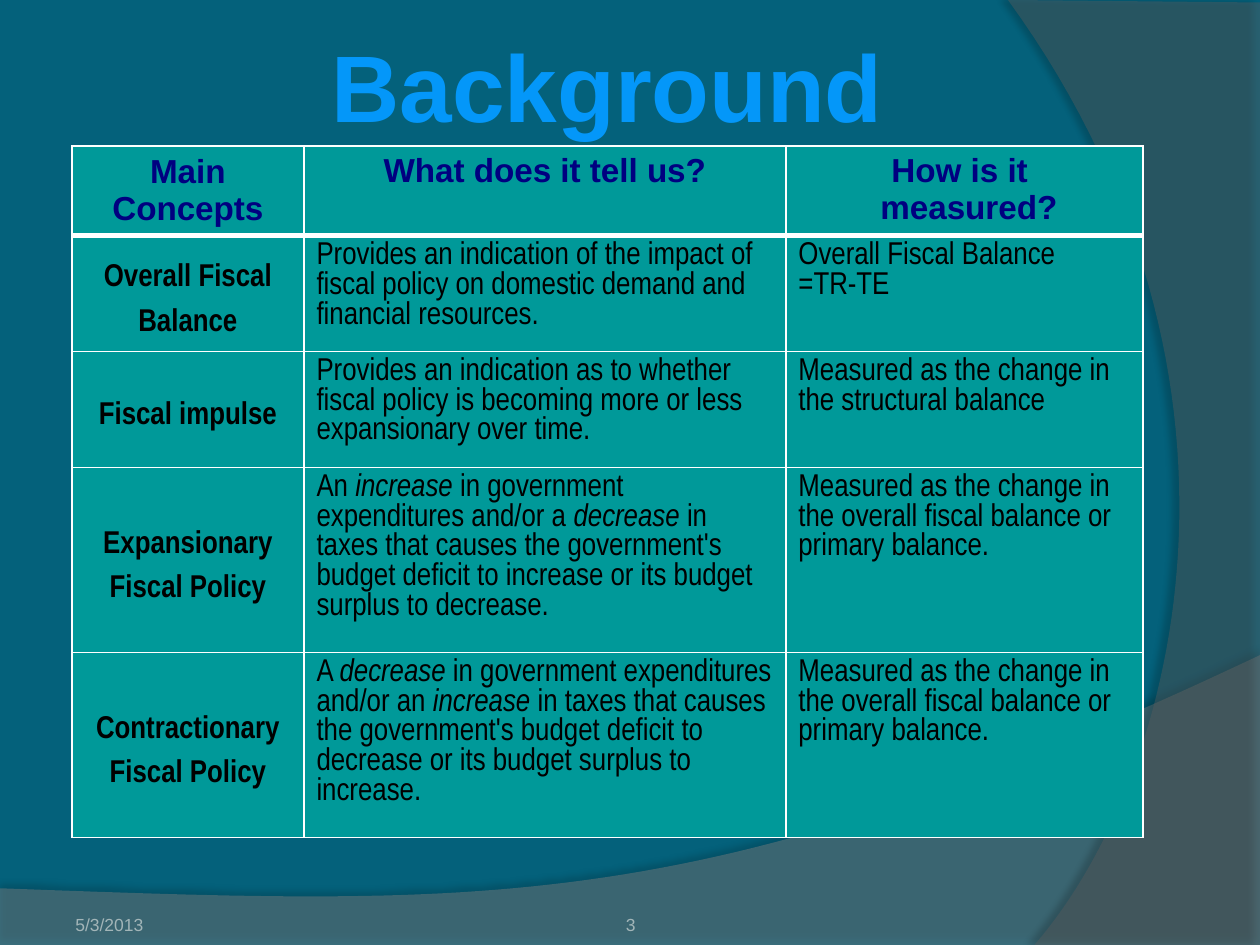
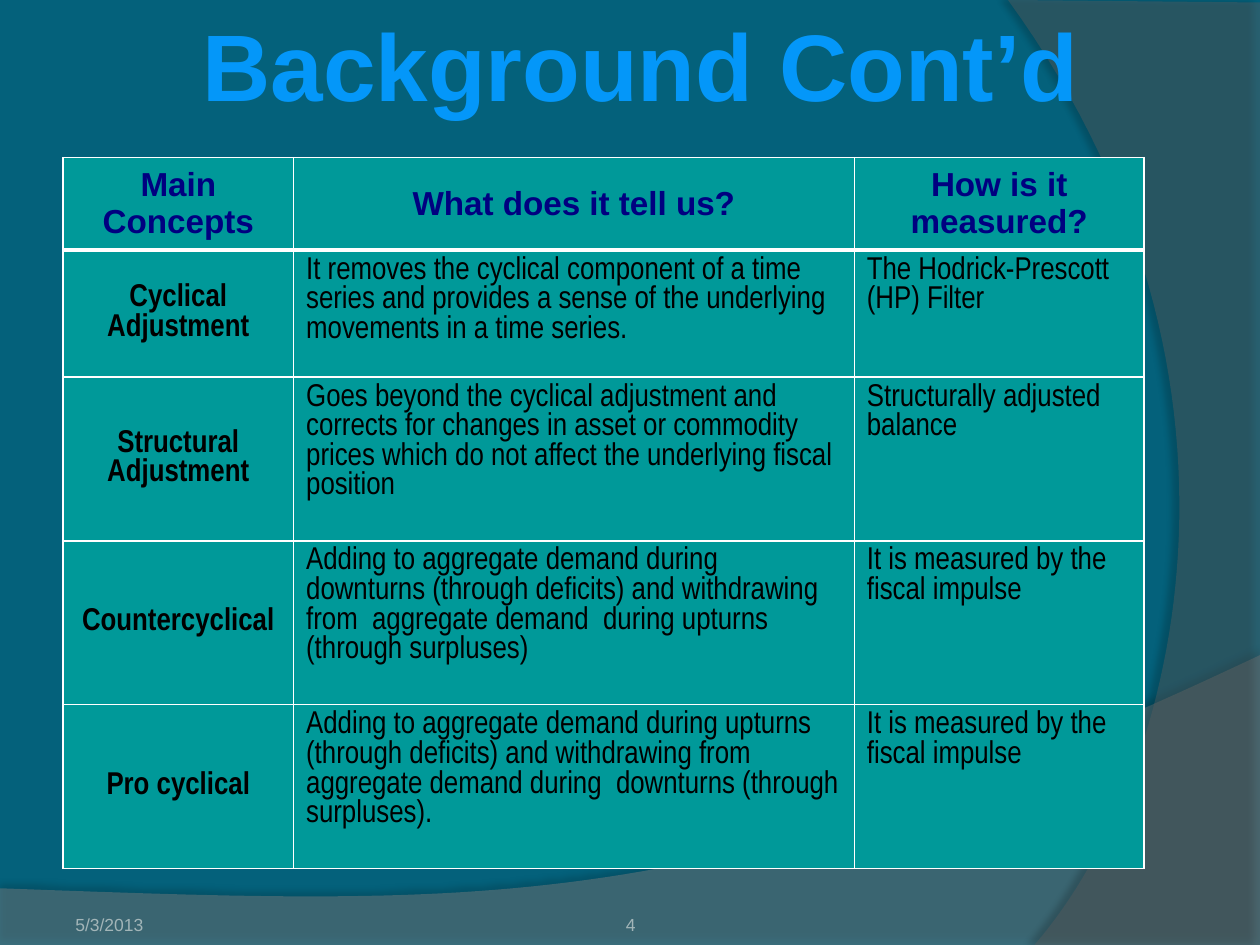
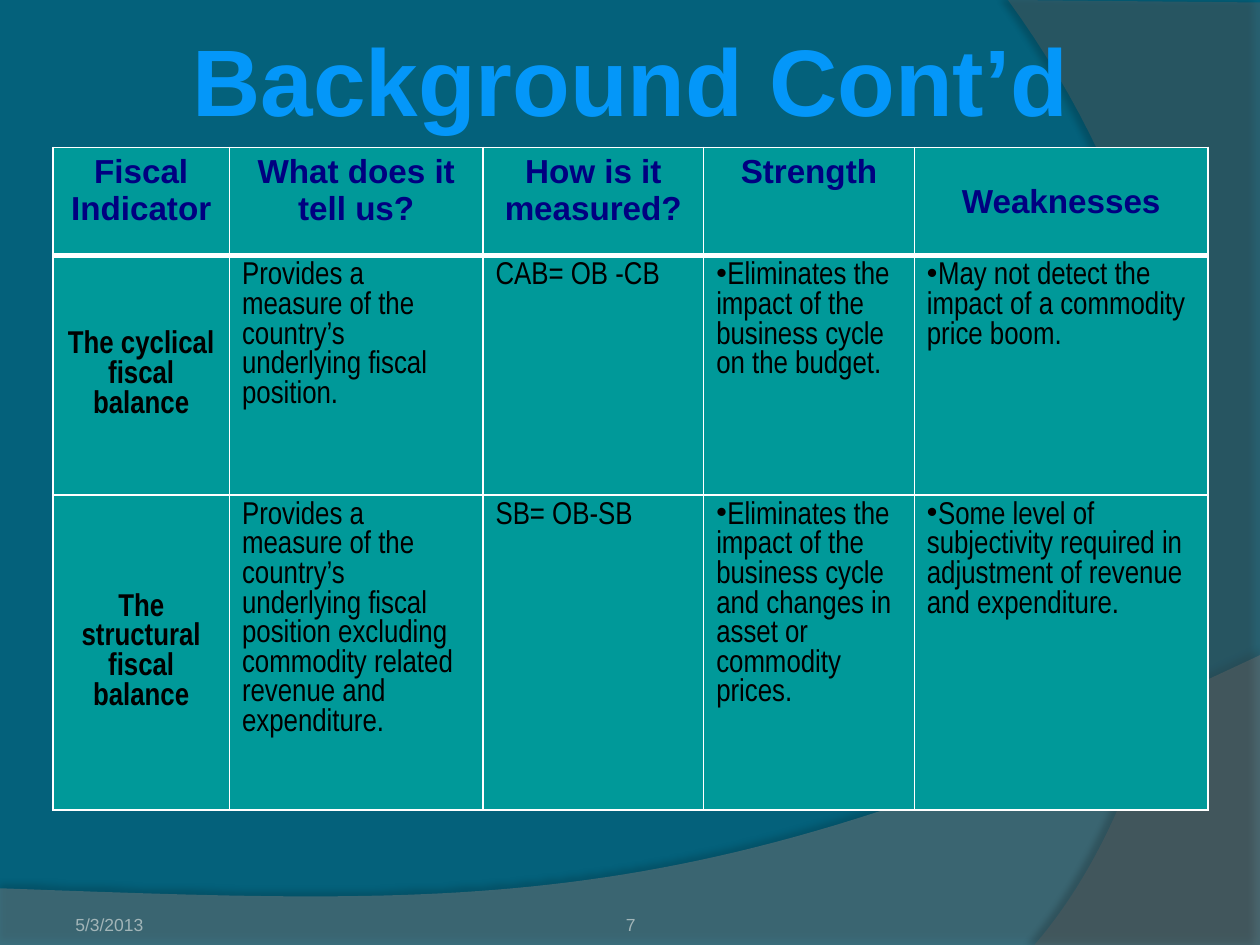
from itertools import product
from typing import NamedTuple

from lxml import etree
from pptx import Presentation
from pptx import util as u
from pptx.dml.color import RGBColor
from pptx.enum import text
from pptx.oxml.ns import qn

SLIDE_W, SLIDE_H = u.Inches(10), u.Inches(7.5)

DEEP_BLUE, TEAL, WHITE = "04617B", "009999", "FFFFFF"
TITLE_BLUE, HEADER_NAVY, BLACK, FOOTER_GREY = "0497F9", "000080", "000000", "A2B5B8"
CENTER, LEFT = text.PP_ALIGN.CENTER, text.PP_ALIGN.LEFT
TOP, MIDDLE, BOTTOM = (text.MSO_ANCHOR.TOP, text.MSO_ANCHOR.MIDDLE,
                       text.MSO_ANCHOR.BOTTOM)
DATE = "5/3/2013"

Point = tuple[float, float]


class Box(NamedTuple):
    """A frame in percent of the slide's width and height."""
    left: float
    top: float
    width: float
    height: float


class Style(NamedTuple):
    size: float
    font: str
    color: str
    bold: bool = False
    align: text.PP_ALIGN = LEFT
    spacing: float | None = None


class Swoosh(NamedTuple):
    """A translucent band: straight corners, then one curve back to its start."""
    corners: list[Point]
    curve: list[Point]
    color: str
    opacity: int
    shadow_opacity: int
    shadow_distance: float
    shadow_angle: int


class ConceptTable(NamedTuple):
    box: Box
    columns: list[int]
    rows: list[int]
    middle_headers: set[int]
    cells: list[list[str]]
    label_spacing: float | None = None


class Page(NamedTuple):
    number: int
    title: str
    title_box: Box
    title_anchor: text.MSO_ANCHOR
    table: ConceptTable


TITLE = Style(54, "Arial", TITLE_BLUE, True, CENTER)
HEADER = Style(19, "Arial", HEADER_NAVY, True, CENTER)
LABEL = Style(18, "Arial Narrow", BLACK, True, CENTER)
BODY = Style(18, "Arial Narrow", BLACK)
FOOTER = Style(10, "Arial", FOOTER_GREY)

DATE_BOX = Box(5, 93.6, 23.3, 5.33)
NUMBER_BOX = Box(34.2, 93.6, 31.7, 5.33)

SWOOSHES = [
    Swoosh([(0, 94), (0, 100), (100, 100), (100, 69.33)],
           [(55.9, 97.2), (39.1, 95.87), (0, 94)], "7F7F7F", 45, 35, 3.5, 270),
    Swoosh([(80, 0), (100, 0.27), (100, 100), (82.1, 100)],
           [(93.5, 82.53), (101.8, 40), (80, 0)], "5E5E5E", 40, 45, 4, 180),
]

# In cell texts, *stars* mark italics, a leading • a bulleted paragraph.
PAGES = [
    Page(3, "Background", Box(25.1, 2.27, 46.2, 25.6), TOP, ConceptTable(
        Box(5.7, 15.47, 85, 73.2), [184, 382, 283], [71, 92, 92, 147, 147], {0}, [
            ["Main Concepts", "What does it tell us?", "How is it \n measured?"],
            ["Overall Fiscal Balance",
             "Provides an indication of the impact of fiscal policy on domestic "
             "demand and financial resources.",
             "Overall Fiscal Balance\n=TR-TE"],
            ["Fiscal impulse",
             "Provides an indication as to whether fiscal policy is becoming more "
             "or less expansionary over time.",
             "Measured as the change in the structural balance"],
            ["Expansionary Fiscal Policy",
             "An *increase* in government expenditures and/or a *decrease* in taxes "
             "that causes the government's budget deficit to increase or its budget "
             "surplus to decrease.",
             "Measured as the change in the overall fiscal balance or primary balance."],
            ["Contractionary Fiscal Policy",
             "A *decrease* in government expenditures and/or an *increase* in taxes "
             "that causes the government's budget deficit to decrease or its budget "
             "surplus to increase.",
             "Measured as the change in the overall fiscal balance or primary balance."],
        ], label_spacing=1.5)),
    Page(4, "Background Cont’d", Box(14.7, 0, 72.3, 13.47), MIDDLE, ConceptTable(
        Box(5, 16.67, 85.8, 75.07), [183, 445, 230], [73, 101, 130, 130, 130],
        {0, 1, 2}, [
            ["Main Concepts", "What does it tell us?", "How is it measured?"],
            ["Cyclical Adjustment",
             "It removes the cyclical component of a time series and provides a "
             "sense of the underlying movements in a time series.",
             "The Hodrick-Prescott (HP) Filter"],
            ["Structural Adjustment",
             "Goes beyond the cyclical adjustment and corrects for changes in asset "
             "or commodity prices which do not affect the underlying fiscal position",
             "Structurally adjusted balance"],
            ["Countercyclical",
             "Adding to aggregate demand during downturns (through deficits) and "
             "withdrawing from  aggregate demand  during upturns (through surpluses)",
             "It is measured by the fiscal impulse"],
            ["Pro cyclical",
             "Adding to aggregate demand during upturns (through deficits) and "
             "withdrawing from aggregate demand during  downturns (through surpluses).",
             "It is measured by the fiscal impulse"],
        ])),
    Page(7, "Background Cont’d", Box(13.9, 1.6, 72.3, 13.47), MIDDLE, ConceptTable(
        Box(4.2, 15.6, 91.7, 70.13), [140, 201, 175, 167, 233], [86, 190, 250], {4}, [
            ["Fiscal Indicator", "What does it tell us?", "How is it measured?",
             "Strength", "Weaknesses"],
            ["The cyclical\nfiscal balance",
             "Provides a measure of the country’s underlying fiscal position.",
             "CAB= OB -CB",
             "•Eliminates the impact of the business cycle on the budget.",
             "•May not detect the impact of a commodity price boom."],
            ["The structural\nfiscal balance",
             "Provides a measure of the country’s underlying fiscal position "
             "excluding commodity related revenue and expenditure.",
             "SB= OB-SB",
             "•Eliminates the impact of the business cycle and changes in asset or "
             "commodity prices.",
             "•Some level of subjectivity required in adjustment of revenue and "
             "expenditure."],
        ])),
]


def rgb(color: str) -> RGBColor:
    return RGBColor.from_string(color)


def across(share: float) -> int:
    return round(SLIDE_W * share / 100)


def down(share: float) -> int:
    return round(SLIDE_H * share / 100)


def place(box: Box) -> tuple[int, int, int, int]:
    return across(box.left), down(box.top), across(box.width), down(box.height)


def add_xml(parent, tag: str, **attributes):
    return etree.SubElement(parent, qn(tag), {k: str(v) for k, v in attributes.items()})


def write(frame, content: str, style: Style) -> None:
    """Fill a text frame, one paragraph a line."""
    frame.word_wrap = True
    for index, line in enumerate(content.split("\n")):
        paragraph = frame.add_paragraph() if index else frame.paragraphs[0]
        paragraph.alignment = style.align
        if style.spacing:
            paragraph.line_spacing = style.spacing
        if line.startswith("•"):
            properties = paragraph._p.get_or_add_pPr()
            properties.set("marL", "0")
            properties.set("indent", "0")
            add_xml(properties, "a:buChar", char="•")
        for part, words in enumerate(line.removeprefix("•").split("*")):
            run = paragraph.add_run()
            run.text = words
            font = run.font
            font.size, font.name = u.Pt(style.size), style.font
            font.bold, font.italic = style.bold, part % 2 == 1
            font.color.rgb = rgb(style.color)


def add_text(slide, box: Box, content: str, style: Style, anchor: text.MSO_ANCHOR):
    frame = slide.shapes.add_textbox(*place(box)).text_frame
    frame.vertical_anchor = anchor
    write(frame, content, style)
    return frame


def bezier(points: list[Point], steps: int = 60) -> list[Point]:
    """Sample a cubic curve given by four points, without its start."""
    def at(t: float) -> Point:
        weights = ((1 - t) ** 3, 3 * t * (1 - t) ** 2, 3 * t * t * (1 - t), t ** 3)
        return (sum(w * p[0] for w, p in zip(weights, points)),
                sum(w * p[1] for w, p in zip(weights, points)))
    return [at(step / steps) for step in range(1, steps + 1)]


def add_swoosh(slide, swoosh: Swoosh) -> None:
    outline = swoosh.corners + bezier([swoosh.corners[-1], *swoosh.curve])
    start, *others = [(across(x), down(y)) for x, y in outline]
    builder = slide.shapes.build_freeform(*start)
    builder.add_line_segments(others, close=True)
    band = builder.convert_to_shape()
    band.line.fill.background()
    band.fill.solid()
    band.fill.fore_color.rgb = rgb(swoosh.color)
    band.shadow.inherit = False
    properties = band._element.spPr
    add_xml(properties.find(qn("a:solidFill"))[0], "a:alpha", val=swoosh.opacity * 1000)
    shadow = add_xml(properties.find(qn("a:effectLst")), "a:outerShdw",
                     blurRad=u.Pt(4), dist=u.Pt(swoosh.shadow_distance),
                     dir=swoosh.shadow_angle * 60000, algn="ctr", rotWithShape=0)
    shade = add_xml(shadow, "a:srgbClr", val=BLACK)
    add_xml(shade, "a:alpha", val=swoosh.shadow_opacity * 1000)


def paint_cell(cell, row: int) -> None:
    """White borders, heavy between header and body, around a teal fill."""
    heavy_side = {0: "B", 1: "T"}.get(row)
    for side in "LRTB":
        line = add_xml(cell._tc.get_or_add_tcPr(), f"a:ln{side}",
                       w=u.Pt(3 if side == heavy_side else 1))
        add_xml(add_xml(line, "a:solidFill"), "a:srgbClr", val=WHITE)
    cell.fill.solid()
    cell.fill.fore_color.rgb = rgb(TEAL)


def add_concepts(slide, concepts: ConceptTable) -> None:
    left, top, width, height = place(concepts.box)
    grid = slide.shapes.add_table(len(concepts.rows), len(concepts.columns),
                                  left, top, width, height).table
    grid.first_row = grid.horz_banding = False
    for column, share in zip(grid.columns, concepts.columns):
        column.width = round(width * share / sum(concepts.columns))
    for row, share in zip(grid.rows, concepts.rows):
        row.height = round(height * share / sum(concepts.rows))
    label = LABEL._replace(spacing=concepts.label_spacing)
    for r, c in product(range(len(concepts.rows)), range(len(concepts.columns))):
        cell = grid.cell(r, c)
        paint_cell(cell, r)
        middle = c in concepts.middle_headers if r == 0 else c == 0
        cell.vertical_anchor = MIDDLE if middle else TOP
        write(cell.text_frame, concepts.cells[r][c],
              HEADER if r == 0 else label if c == 0 else BODY)


def add_footer(slide, number: int) -> None:
    for box, content, align, side in ((NUMBER_BOX, str(number), CENTER, 0),
                                      (DATE_BOX, DATE, LEFT, 0.1)):
        frame = add_text(slide, box, content, FOOTER._replace(align=align), BOTTOM)
        frame.margin_left = frame.margin_right = u.Inches(side)
        frame.margin_bottom = 0


def add_page(deck, page: Page) -> None:
    slide = deck.slides.add_slide(deck.slide_layouts[6])
    for swoosh in SWOOSHES:
        add_swoosh(slide, swoosh)
    add_concepts(slide, page.table)
    add_footer(slide, page.number)
    title = add_text(slide, page.title_box, page.title, TITLE, page.title_anchor)
    title.word_wrap = False


def main() -> None:
    deck = Presentation()
    deck.slide_width, deck.slide_height = SLIDE_W, SLIDE_H
    backdrop = deck.slide_master.background.fill
    backdrop.solid()
    backdrop.fore_color.rgb = rgb(DEEP_BLUE)
    for page in PAGES:
        add_page(deck, page)
    deck.save("out.pptx")


if __name__ == "__main__":
    main()
